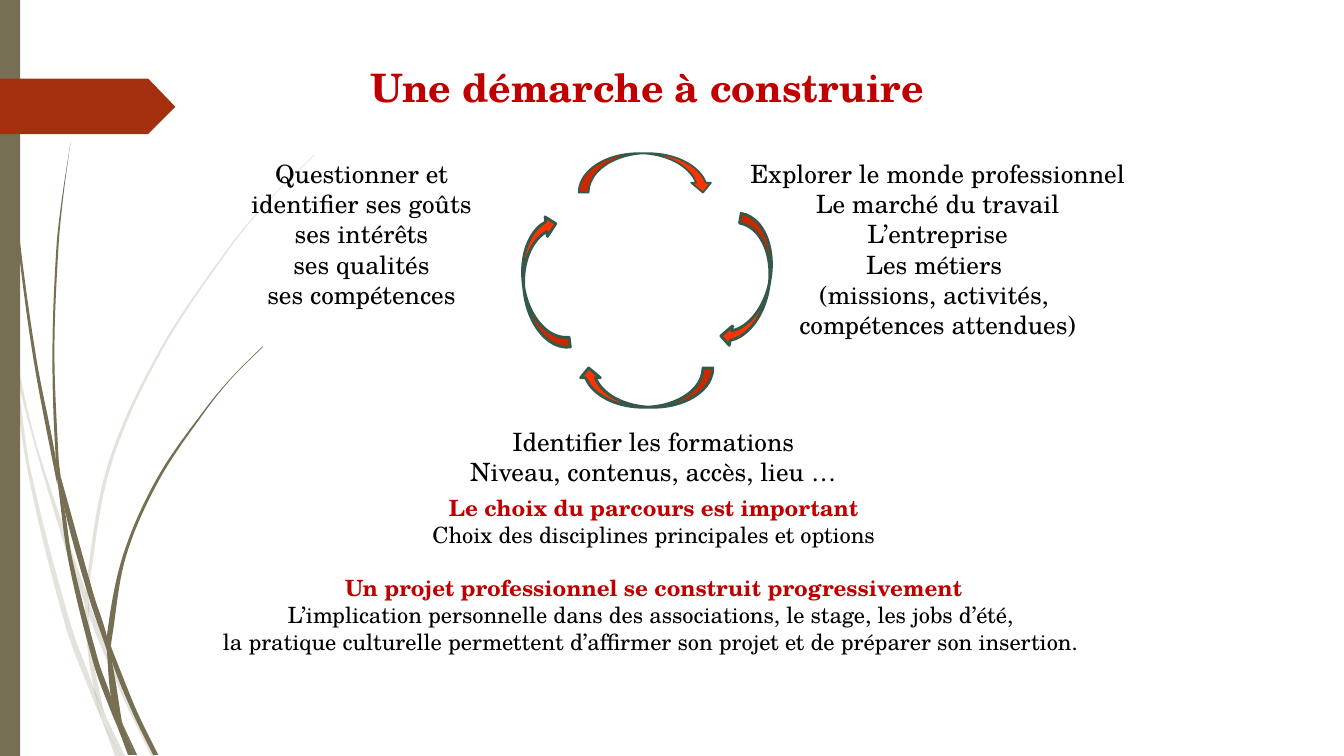
import math
import pptx
import pptx.util
import pptx.dml.color
import pptx.enum.shapes
import pptx.enum.text
import pptx.oxml.ns
import lxml.etree

# Grid of 1333 columns and 750 rows, one cell is a hundredth of an inch
CELL = pptx.util.Inches(0.01)
COLUMNS, ROWS = 1333, 750
FONT = "TeX Gyre Schola"
OLIVE, RUST, RED, BLACK = "766F54", "A53010", "C00000", "000000"
ORANGE, TEAL = "FF3300", "325949"

presentation = pptx.Presentation()
presentation.slide_width = COLUMNS * CELL
presentation.slide_height = ROWS * CELL
slide = presentation.slides.add_slide(presentation.slide_layouts[6])


def paint(shape, fill, line=None, line_width=0):
    """Give a shape a flat fill, no shadow and an optional outline."""
    shape.shadow.inherit = False
    shape.fill.solid()
    shape.fill.fore_color.rgb = pptx.dml.color.RGBColor.from_string(fill)
    if line:
        shape.line.color.rgb = pptx.dml.color.RGBColor.from_string(line)
        shape.line.width = pptx.util.Pt(line_width)
    else:
        shape.line.fill.background()


def bend(edge):
    """Return (handle, handle, end) of a smooth cubic for each segment of an edge."""
    slopes = []
    for before, after in zip([edge[0], *edge], [*edge[1:], edge[-1]]):
        run, rise = after[0] - before[0], after[1] - before[1]
        length = math.hypot(run, rise)
        slopes.append((run / length, rise / length))
    segments = []
    for start, end, leaving, arriving in zip(edge, edge[1:], slopes, slopes[1:]):
        reach = math.dist(start, end) / 3
        segments.append((
            (start[0] + leaving[0] * reach, start[1] + leaving[1] * reach),
            (end[0] - arriving[0] * reach, end[1] - arriving[1] * reach), end))
    return segments


# Pieces of grass blades: left edge and right edge, both from top to bottom
pale_grass = [
    ([(0, 299), (10, 344), (11, 350)], [(0, 282), (9, 322), (11, 350)]),
    ([(14, 345), (17, 376), (58, 522), (84, 599)],
     [(14, 345), (34, 433), (62, 520), (85, 586)]),
    ([(88, 596), (88, 610), (123, 694), (150, 750)],
     [(88, 596), (92, 607), (127, 692), (155, 750)]),
    ([(105, 711), (119, 750)], [(105, 711), (124, 750)]),
    ([(11, 350), (28, 470), (65, 621), (92, 693), (101, 714)],
     [(11, 350), (17, 376), (31, 469), (70, 619), (93, 683), (101, 714)]),
    ([(84, 599), (87, 646), (93, 683), (96, 692), (105, 711)],
     [(84, 599), (88, 610), (91, 646), (103, 706), (105, 711)]),
    ([(312, 153), (268, 197), (228, 244), (158, 348), (107, 461), (85, 584), (88, 596)],
     [(312, 154), (268, 198), (229, 245), (160, 349), (110, 462), (88, 584), (88, 596)]),
    ([(101, 714), (114, 750)], [(101, 714), (119, 750)]),
    ([(85, 586), (84, 599), (88, 608)], [(85, 586), (88, 596), (88, 610)]),
    ([(93, 683), (101, 714), (119, 750)], [(93, 683), (105, 711), (119, 750)]),
]
dark_grass = [
    ([(3, 0), (4, 48), (7, 110), (17, 233), (33, 355), (56, 477), (57, 481)],
     [(4, 0), (5, 48), (8, 109), (19, 232), (36, 355), (55, 453), (57, 481)]),
    ([(60, 472), (64, 505), (88, 592), (106, 645)],
     [(60, 472), (93, 590), (106, 631), (106, 645)]),
    ([(110, 641), (111, 656), (132, 708), (152, 749)],
     [(110, 641), (113, 649), (136, 706), (157, 749)]),
    ([(57, 477), (68, 557), (93, 659), (111, 708), (117, 722)],
     [(57, 477), (64, 505), (72, 556), (98, 657), (110, 691), (117, 722)]),
    ([(70, 141), (62, 193), (56, 245), (52, 349), (55, 449), (60, 472)],
     [(70, 141), (63, 193), (58, 245), (54, 349), (58, 453), (60, 472)]),
    ([(122, 719), (133, 749)], [(122, 719), (136, 749)]),
    ([(55, 449), (57, 477), (64, 505)], [(55, 449), (60, 472), (64, 505)]),
    ([(260, 344), (231, 373), (204, 405), (156, 474), (122, 551), (106, 631), (110, 641)],
     [(261, 344), (231, 374), (205, 406), (158, 476), (125, 552), (111, 633), (110, 641)]),
    ([(117, 722), (127, 749)], [(117, 722), (131, 749)]),
    ([(106, 645), (110, 691), (116, 706), (122, 719)],
     [(106, 645), (111, 656), (121, 716), (122, 719)]),
    ([(106, 631), (106, 645), (111, 656)], [(106, 631), (110, 641), (111, 656)]),
    ([(110, 691), (117, 722), (130, 749)], [(110, 691), (122, 719), (133, 749)]),
]
for opacity, pieces in [(20, pale_grass), (100, dark_grass)]:
    for left_edge, right_edge in pieces:
        upward = right_edge[::-1]
        tip = (upward[0],) * 3
        segments = bend(left_edge) + [tip] + bend(upward)
        builder = slide.shapes.build_freeform(
            *(value * CELL for value in left_edge[0]))
        builder.add_line_segments(
            [(end[0] * CELL, end[1] * CELL) for *handles, end in segments])
        piece = builder.convert_to_shape()
        paint(piece, OLIVE)
        straights = list(piece._element.iter(pptx.oxml.ns.qn("a:lnTo")))
        for straight, segment in zip(straights, segments):
            cubic = lxml.etree.Element(pptx.oxml.ns.qn("a:cubicBezTo"))
            for x, y in segment:
                lxml.etree.SubElement(
                    cubic, pptx.oxml.ns.qn("a:pt"),
                    x=str(round(x * CELL - piece.left)), y=str(round(y * CELL - piece.top)))
            straight.getparent().replace(straight, cubic)
        if opacity < 100:
            colour = piece._element.spPr.find(".//" + pptx.oxml.ns.qn("a:srgbClr"))
            lxml.etree.SubElement(
                colour, pptx.oxml.ns.qn("a:alpha"), val=str(opacity * 1000))

side_bar = slide.shapes.add_shape(
    pptx.enum.shapes.MSO_SHAPE.RECTANGLE, 0, 0, 20 * CELL, ROWS * CELL)
paint(side_bar, OLIVE)

builder = slide.shapes.build_freeform(0, 78, scale=CELL)
builder.add_line_segments([(147, 78), (174, 106), (147, 133), (0, 133)])
paint(builder.convert_to_shape(), RUST)

# Cycle of arrows: left, top, rotation, outline width
for left, top, rotation, line_width in [
        (574, 152, 0, 1.25), (677, 261, 99.4, 2), (574, 365, 180, 2), (472, 261, 263.3, 2)]:
    arrow = slide.shapes.add_shape(
        pptx.enum.shapes.MSO_SHAPE.CURVED_DOWN_ARROW,
        left * CELL, top * CELL, 133 * CELL, 39 * CELL)
    arrow.rotation = rotation
    paint(arrow, ORANGE, TEAL, line_width)

LEFT, CENTER = pptx.enum.text.PP_ALIGN.LEFT, pptx.enum.text.PP_ALIGN.CENTER
plain = {"color": BLACK, "bold": False}
strong = {"color": RED, "bold": True}

# Text boxes: left, top, width, height, size, alignment, (text, style, space before)
boxes = [
    (358, 58, 623, 59, 28, LEFT, [("Une démarche à construire", strong, 0)]),
    (210, 152, 297, 162, 18, CENTER, [
        ("Questionner et identifier ses goûts\vses intérêts\vses qualités\vses compétences",
         plain, 0)]),
    (713, 152, 434, 192, 18, CENTER, [
        ("Explorer le monde professionnel", plain, 0),
        ("Le marché du travail\vL’entreprise\vLes métiers ", plain, 0),
        ("(missions, activités, ", plain, 0),
        ("compétences attendues)", plain, 0)]),
    (445, 418, 406, 71, 18, CENTER, [
        ("Identifier les formations\vNiveau, contenus, accès, lieu …", plain, 0)]),
    (178, 485, 941, 172, 16, CENTER, [
        ("Le choix du parcours est important", strong, 0),
        ("Choix des disciplines principales et options", plain, 0),
        ("Un projet professionnel se construit progressivement", strong, 19.2),
        ("L’implication personnelle dans des associations, le stage, les jobs d’été, ", plain, 0),
        ("la pratique culturelle permettent d’affirmer son projet et de préparer son insertion. ",
         plain, 0)]),
]
for left, top, width, height, size, alignment, lines in boxes:
    frame = slide.shapes.add_textbox(
        left * CELL, top * CELL, width * CELL, height * CELL).text_frame
    frame.word_wrap = True
    frame.auto_size = pptx.enum.text.MSO_AUTO_SIZE.SHAPE_TO_FIT_TEXT
    frame.text = "\n".join(text for text, style, space in lines)
    for paragraph, (text, style, space) in zip(frame.paragraphs, lines):
        paragraph.alignment = alignment
        if space:
            paragraph.space_before = pptx.util.Pt(space)
        for run in paragraph.runs:
            formats = {"name": FONT, "size": pptx.util.Pt(size), "bold": style["bold"]}
            for name, value in formats.items():
                setattr(run.font, name, value)
            run.font.color.rgb = pptx.dml.color.RGBColor.from_string(style["color"])

presentation.save("out.pptx")
